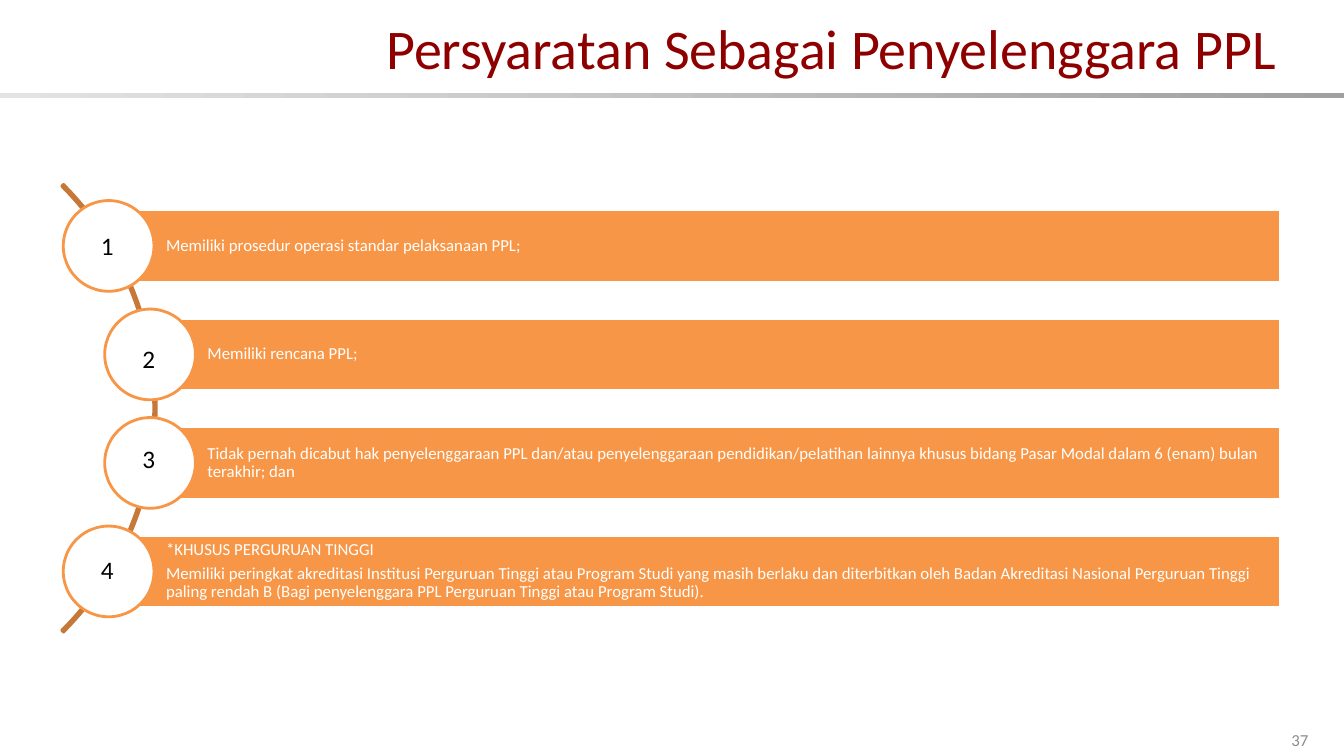
from pptx import Presentation
from pptx.dml.color import RGBColor
from pptx.enum.shapes import MSO_SHAPE
from pptx.enum.text import MSO_ANCHOR, PP_ALIGN
from pptx.util import Pt

RECT, OVAL, ARC = MSO_SHAPE.RECTANGLE, MSO_SHAPE.OVAL, MSO_SHAPE.BLOCK_ARC
LEFT, CENTER, RIGHT = PP_ALIGN.LEFT, PP_ALIGN.CENTER, PP_ALIGN.RIGHT
MIDDLE = MSO_ANCHOR.MIDDLE

RED = RGBColor(0x8E, 0x00, 0x00)
ORANGE = RGBColor(0xF7, 0x96, 0x46)
BROWN = RGBColor(0xC6, 0x78, 0x38)
WHITE = RGBColor(0xFF, 0xFF, 0xFF)
BLACK = RGBColor(0x00, 0x00, 0x00)
GREY = RGBColor(0x8C, 0x8C, 0x8C)
PALE = RGBColor(0xE3, 0xE3, 0xE3)
DARK = RGBColor(0xA0, 0xA0, 0xA0)
FONT = "Calibri"

# Content
TITLE = "Persyaratan Sebagai Penyelenggara PPL"
PAGE = "37"
# Each item: circle centre, vertical shift of its number, paragraphs
ITEMS = [
    (77.6, -0.7, ["Memiliki prosedur operasi standar pelaksanaan PPL;"]),
    (107.2, 3.1, ["Memiliki rencana PPL;"]),
    (107.2, -2.9, [
        "Tidak pernah dicabut hak penyelenggaraan PPL dan/atau penyelenggaraan "
        "pendidikan/pelatihan lainnya khusus bidang Pasar Modal dalam 6 (enam) "
        "bulan terakhir; dan"]),
    (77.6, -1.4, [
        "*KHUSUS PERGURUAN TINGGI",
        "Memiliki peringkat akreditasi Institusi Perguruan Tinggi atau Program "
        "Studi yang masih berlaku dan diterbitkan oleh Badan Akreditasi Nasional "
        "Perguruan Tinggi paling rendah B (Bagi penyelenggara PPL Perguruan "
        "Tinggi atau Program Studi)."]),
]

# Layout
WIDE, HIGH = 960, 540
TOP, STEP = 175.7, 77.5
EDGE, BAR, DISC = 914.6, 51.7, 64.8
NUM_W, NUM_H = 36, 28.8


def place(shape, x, y, w, h):
    shape.left, shape.top, shape.width, shape.height = map(Pt, (x, y, w, h))


def draw(kind, x, y, w, h, fill=None, line=None):
    shape = slide.shapes.add_shape(kind, *map(Pt, (x, y, w, h)))
    shape.shadow.inherit = False
    if fill is None:
        shape.fill.background()
    else:
        shape.fill.solid()
        shape.fill.fore_color.rgb = fill
    if line is None:
        shape.line.fill.background()
    else:
        shape.line.color.rgb = line
        shape.line.width = Pt(2)
    return shape


def write(shape, lines, size, color, align, pad=(7.2, 3.6, 7.2, 3.6)):
    frame = shape.text_frame
    frame.word_wrap = True
    frame.vertical_anchor = MIDDLE
    (frame.margin_left, frame.margin_top,
     frame.margin_right, frame.margin_bottom) = map(Pt, pad)
    frame.text = "\n".join(lines)
    for para in frame.paragraphs:
        para.alignment = align
        para.font.name = FONT
        para.font.size = Pt(size)
        para.font.color.rgb = color
    return frame.paragraphs


deck = Presentation()
deck.slide_width, deck.slide_height = Pt(WIDE), Pt(HIGH)
slide = deck.slides.add_slide(deck.slide_layouts[5])

# Title and the shaded rule below it
rule = draw(RECT, 0, 66.4, WIDE, 3.6)
rule.fill.gradient()
rule.fill.gradient_angle = 0
for stop, color in zip(rule.fill.gradient_stops, (PALE, DARK)):
    stop.color.rgb = color
title = slide.shapes.title
place(title, 145.4, 12.2, 782.6, 42.5)
write(title, [TITLE], 40, RED, RIGHT, (7.2, 3.6, 16.5, 3.6))

# Arc behind the items
arc = draw(ARC, -340.6, 65.5, 452.2, 452.2, line=BROWN)
arc.adjustments[0] = 189
arc.adjustments[1] = 27
arc.adjustments[2] = 0.004

# Bars, circles and numbers
for i, (x, dip, lines) in enumerate(ITEMS):
    y = TOP + i * STEP
    bar = draw(RECT, x, y - BAR / 2, EDGE - x, BAR, ORANGE, WHITE)
    for para in write(bar, lines, 12, WHITE, LEFT, (41, 2.4, 2.4, 2.4)):
        para.line_spacing = 0.9
        para.space_after = Pt(4.2)
    draw(OVAL, x - DISC / 2, y - DISC / 2, DISC, DISC, WHITE, ORANGE)
    num = slide.shapes.add_textbox(
        Pt(x - 1 - NUM_W / 2), Pt(y + dip - NUM_H / 2), Pt(NUM_W), Pt(NUM_H))
    write(num, [str(i + 1)], 18, BLACK, CENTER)

# Page number
page = draw(RECT, 912, 511, 33, 29, WHITE)
write(page, [PAGE], 12, GREY, CENTER, (0, 6, 0, 0))

deck.save("out.pptx")
